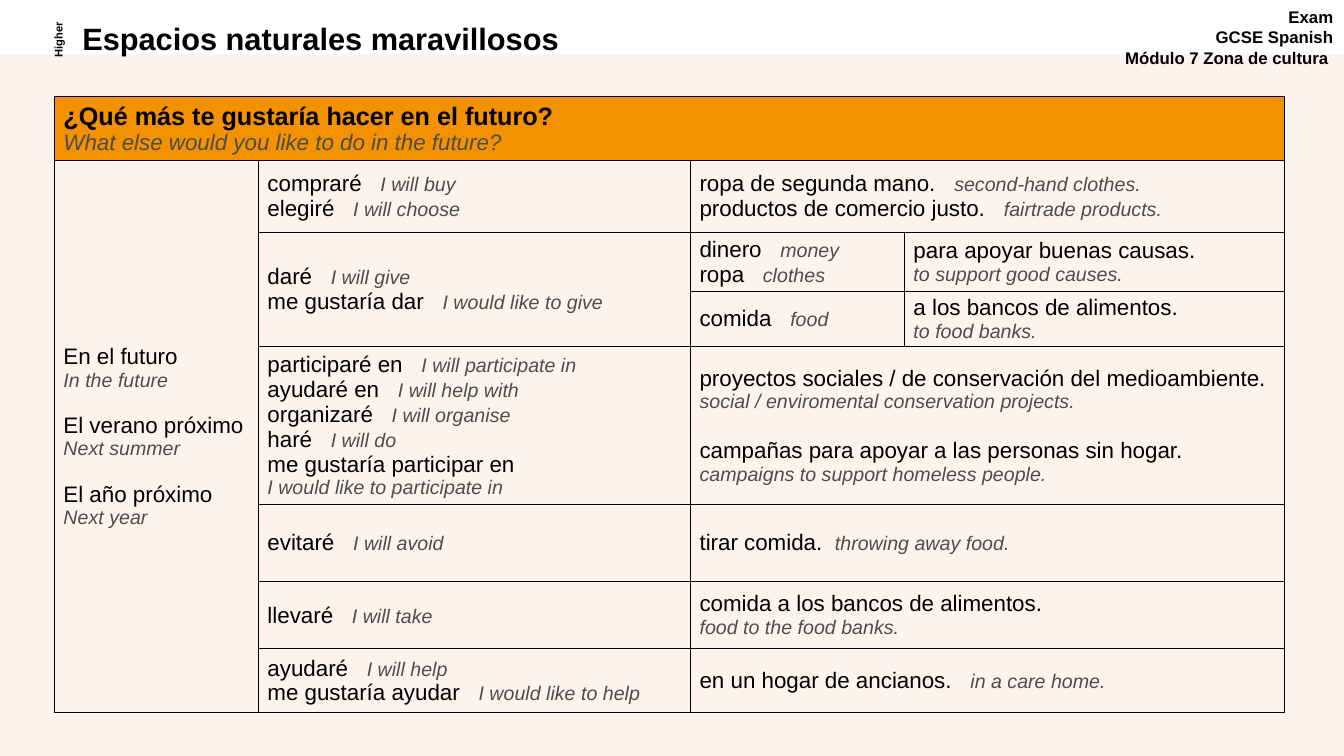
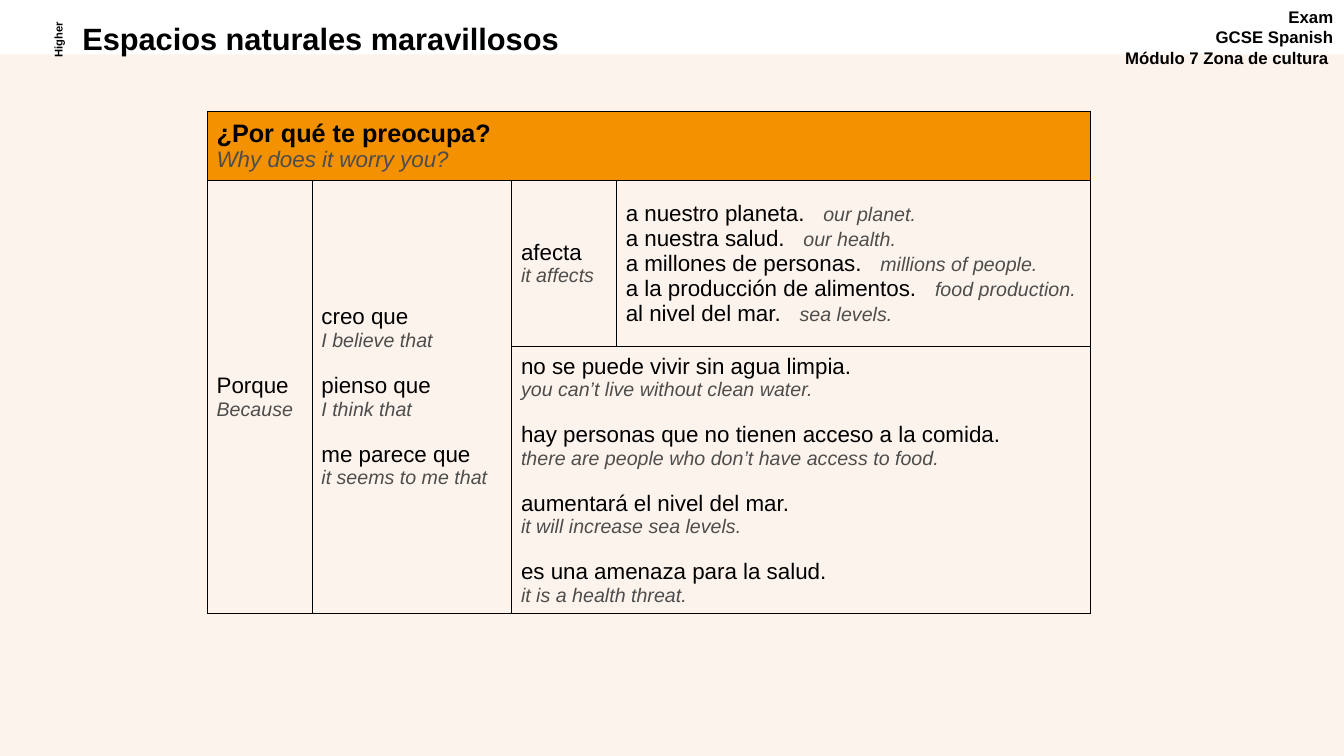
from lxml import etree
from pptx import Presentation
from pptx.dml.color import RGBColor
from pptx.enum.shapes import MSO_SHAPE
from pptx.enum.text import MSO_ANCHOR, MSO_AUTO_SIZE, PP_ALIGN
from pptx.oxml.ns import qn
from pptx.util import Cm, Pt

RECTANGLE = MSO_SHAPE.RECTANGLE
TOP, MIDDLE = MSO_ANCHOR.TOP, MSO_ANCHOR.MIDDLE
NO_AUTOFIT = MSO_AUTO_SIZE.NONE
LEFT, CENTER, RIGHT = PP_ALIGN.LEFT, PP_ALIGN.CENTER, PP_ALIGN.RIGHT
TITLE_ONLY = 5


class Theme:
    """Colours, text formats and spacings of the deck."""
    font = "Arial"
    black, grey = "000000", "4D4D4C"
    cream, orange = "FDF3ED", "F39100"
    title = dict(size=22, bold=True)
    course = dict(size=12, bold=True)
    level = dict(size=8, bold=True)
    question = dict(size=18, bold=True)
    question_gloss = dict(size=16, color=grey, italic=True)
    spanish = dict(size=16)
    english = dict(size=14, color=grey, italic=True)
    gap = dict(size=16, tracking=8.9)
    narrow_gap = dict(size=16, tracking=4.45)
    thin, heavy = 0.75, 1
    group_space = 15.5


def add_span(para, text, size, color=Theme.black, bold=False, italic=False, tracking=0):
    """Add formatted text to a paragraph."""
    span = para.add_run()
    span.text = text
    font = span.font
    font.name, font.size = Theme.font, Pt(size)
    font.bold, font.italic = bold, italic
    font.color.rgb = RGBColor.from_string(color)
    if tracking:
        span._r.get_or_add_rPr().set("spc", str(round(tracking * 100)))


def inline(*pairs, gap=Theme.gap):
    """Return one line per pair, with the translation beside the phrase."""
    return [(0, [(phrase, Theme.spanish), (" ", gap), (gloss, Theme.english)])
            for phrase, gloss in pairs]


def stacked(*pairs, space=Theme.group_space, top=Theme.spanish, below=Theme.english):
    """Return two lines per pair, with the translation under the phrase."""
    lines = []
    for index, (phrase, gloss) in enumerate(pairs):
        lines.append((space if index else 0, [(phrase, top)]))
        lines.append((0, [(gloss, below)]))
    return lines


def question(phrase, gloss):
    """Return the two lines of a table heading."""
    return stacked((phrase, gloss), top=Theme.question, below=Theme.question_gloss)


class Deck:
    """Builds vocabulary pages in one shared style."""

    def __init__(self):
        """Start an empty widescreen deck."""
        self.deck = Presentation()
        self.deck.slide_width, self.deck.slide_height = Cm(33.87), Cm(19.05)
        self.page = None

    def fill_frame(self, frame, lines, align=LEFT):
        """Write lines of spans into a text frame."""
        frame.word_wrap = True
        for index, (space, spans) in enumerate(lines):
            para = frame.add_paragraph() if index else frame.paragraphs[0]
            para.alignment = align
            para.space_before = Pt(space)
            for text, style in spans:
                add_span(para, text, **style)

    def add_text(self, area, texts, style, align, rotation=0):
        """Add a text box with one paragraph per text."""
        box = self.page.shapes.add_textbox(*map(Cm, area))
        box.rotation = rotation
        self.fill_frame(box.text_frame, [(0, [(text, style)]) for text in texts], align)

    def add_page(self, title):
        """Add a page with its panel, title and course labels."""
        self.page = self.deck.slides.add_slide(self.deck.slide_layouts[TITLE_ONLY])
        heading = self.page.shapes.title
        heading.left, heading.top = Cm(1.82), Cm(0.36)
        heading.width, heading.height = Cm(21.67), Cm(1.09)
        heading.text_frame.auto_size = NO_AUTOFIT
        heading.text_frame.vertical_anchor = TOP
        self.fill_frame(heading.text_frame, [(0, [(title, Theme.title)])])
        panel = self.page.shapes.add_shape(RECTANGLE, 0, Cm(1.37), Cm(33.87), Cm(17.68))
        panel.shadow.inherit = False
        panel.fill.solid()
        panel.fill.fore_color.rgb = RGBColor.from_string(Theme.cream)
        panel.line.fill.background()
        heading.element.addprevious(panel.element)
        self.add_text((27.91, 0.05, 5.94, 1.96),
                      ["Exam", "GCSE Spanish", "Módulo 7 Zona de cultura "],
                      Theme.course, RIGHT)
        self.add_text((0.46, 0.72, 1.98, 0.56), ["Higher"], Theme.level, CENTER, rotation=270)

    def style_cell(self, cell, fill, widths):
        """Give a cell its margins, borders and fill."""
        cell.margin_left = cell.margin_right = Cm(0.23)
        cell.margin_top = cell.margin_bottom = 0
        cell.vertical_anchor = MIDDLE
        properties = cell._tc.get_or_add_tcPr()
        for side in "LRTB":
            line = etree.SubElement(properties, qn(f"a:ln{side}"), w=str(Pt(widths[side])))
            paint = etree.SubElement(line, qn("a:solidFill"))
            etree.SubElement(paint, qn("a:srgbClr"), val=Theme.black)
        cell.fill.solid()
        cell.fill.fore_color.rgb = RGBColor.from_string(fill)

    def add_table(self, left, top, columns, rows, cells, heavy_row):
        """Add a table; each cell is row, column, row span, column span, lines."""
        table = self.page.shapes.add_table(
            len(rows), len(columns), Cm(left), Cm(top), Cm(sum(columns)), Cm(sum(rows))).table
        table.first_row = table.horz_banding = False
        for column, width in zip(table.columns, columns):
            column.width = Cm(width)
        for index, height in enumerate(rows):
            table.rows[index].height = Cm(height)
            widths = dict.fromkeys("LRTB", Theme.thin)
            if index == heavy_row:
                widths["B"] = Theme.heavy
            if index == heavy_row + 1:
                widths["T"] = Theme.heavy
            for cell in table.rows[index].cells:
                self.style_cell(cell, Theme.cream if index else Theme.orange, widths)
        for row, column, down, across, lines in cells:
            cell = table.cell(row, column)
            if down * across > 1:
                cell.merge(table.cell(row + down - 1, column + across - 1))
            self.fill_frame(cell.text_frame, lines)


FUTURE = [
    (0, 0, 1, 4, question("¿Qué más te gustaría hacer en el futuro?",
                          "What else would you like to do in the future?")),
    (1, 0, 7, 1, stacked(("En el futuro", "In the future"),
                         ("El verano próximo", "Next summer"),
                         ("El año próximo", "Next year"))),
    (1, 1, 1, 1, inline(("compraré", "I will buy"), ("elegiré", "I will choose"))),
    (1, 2, 1, 2, inline(("ropa de segunda mano.", "second-hand clothes."),
                        ("productos de comercio justo.", "fairtrade products."))),
    (2, 1, 2, 1, inline(("daré", "I will give"),
                        ("me gustaría dar", "I would like to give"))),
    (2, 2, 1, 1, inline(("dinero", "money"), ("ropa", "clothes"))),
    (2, 3, 1, 1, stacked(("para apoyar buenas causas.", "to support good causes."))),
    (3, 2, 1, 1, inline(("comida", "food"))),
    (3, 3, 1, 1, stacked(("a los bancos de alimentos.", "to food banks."))),
    (4, 1, 1, 1, inline(("participaré en", "I will participate in"),
                        ("ayudaré en", "I will help with"),
                        ("organizaré", "I will organise"),
                        ("haré", "I will do"))
     + stacked(("me gustaría participar en", "I would like to participate in"))),
    (4, 2, 1, 2, stacked(("proyectos sociales / de conservación del medioambiente.",
                          "social / enviromental conservation projects."),
                         ("campañas para apoyar a las personas sin hogar.",
                          "campaigns to support homeless people."), space=18)),
    (5, 1, 1, 1, inline(("evitaré", "I will avoid"))),
    (5, 2, 1, 2, inline(("tirar comida.", "throwing away food."), gap=Theme.narrow_gap)),
    (6, 1, 1, 1, inline(("llevaré", "I will take"))),
    (6, 2, 1, 2, stacked(("comida a los bancos de alimentos.", "food to the food banks."))),
    (7, 1, 1, 1, inline(("ayudaré", "I will help"),
                        ("me gustaría ayudar", "I would like to help"))),
    (7, 2, 1, 2, inline(("en un hogar de ancianos.", "in a care home."))),
]

WORRIES = [
    (0, 0, 1, 4, question("¿Por qué te preocupa?", "Why does it worry you?")),
    (1, 0, 2, 1, stacked(("Porque", "Because"))),
    (1, 1, 2, 1, stacked(("creo que", "I believe that"),
                         ("pienso que", "I think that"),
                         ("me parece que", "it seems to me that"))),
    (1, 2, 1, 1, stacked(("afecta", "it affects"))),
    (1, 3, 1, 1, inline(("a nuestro planeta.", "our planet."),
                        ("a nuestra salud.", "our health."),
                        ("a millones de personas.", "millions of people."),
                        ("a la producción de alimentos.", "food production."),
                        ("al nivel del mar.", "sea levels."))),
    (2, 2, 1, 2, stacked(("no se puede vivir sin agua limpia.",
                          "you can’t live without clean water."),
                         ("hay personas que no tienen acceso a la comida.",
                          "there are people who don’t have access to food."),
                         ("aumentará el nivel del mar.", "it will increase sea levels."),
                         ("es una amenaza para la salud.", "it is a health threat."))),
]


def main():
    """Build both vocabulary pages and save the deck."""
    builder = Deck()
    title = "Espacios naturales maravillosos"
    builder.add_page(title)
    builder.add_table(1.37, 2.44, [5.14, 10.89, 5.39, 9.57],
                      [1.61, 1.81, 1.49, 1.39, 3.98, 1.94, 1.69, 1.61], FUTURE, heavy_row=1)
    builder.add_page(title)
    builder.add_table(5.23, 2.81, [2.64, 5.03, 2.64, 11.94], [1.73, 4.2, 6.6],
                      WORRIES, heavy_row=1)
    builder.deck.save("out.pptx")


if __name__ == "__main__":
    main()
